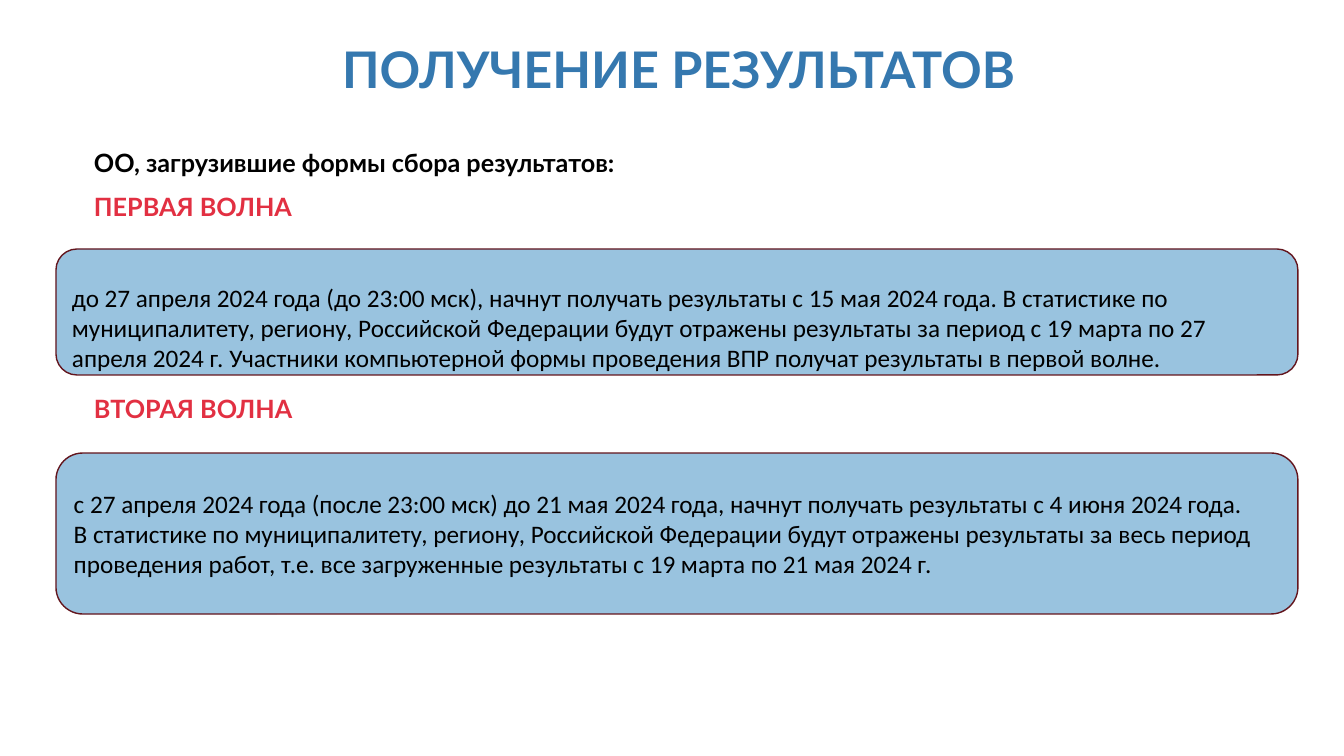
from pptx import Presentation
from pptx.dml.color import RGBColor
from pptx.enum.shapes import MSO_SHAPE
from pptx.enum.text import MSO_ANCHOR, MSO_AUTO_SIZE, PP_ALIGN
from pptx.util import Pt

COLORS = {"title": "3578AF", "text": "000000", "wave": "E23042",
          "panel": "99C3DF", "border": "63151D"}
TITLE = "ПОЛУЧЕНИЕ РЕЗУЛЬТАТОВ"
TITLE_BOX = (84, 40, 1189, 69)

# box in px, then (text, colour) lines
HEADINGS = [
    ((84, 142, 588, 93), [("ОО, загрузившие формы сбора результатов:", "text"),
                          ("ПЕРВАЯ ВОЛНА", "wave")]),
    ((84, 388, 588, 58), [("ВТОРАЯ ВОЛНА", "wave")]),
]
# top, height and top inset in px, then paragraphs
PANEL_LEFT, PANEL_WIDTH = 56, 1242
PANELS = [
    (249, 126, 36, [
        "до 27 апреля 2024 года (до 23:00 мск), начнут получать результаты с 15 мая 2024 года. "
        "В статистике по муниципалитету, региону, Российской Федерации будут отражены результаты "
        "за период с 19 марта по 27 апреля 2024 г. Участники компьютерной формы проведения ВПР "
        "получат результаты в первой волне."]),
    (453, 161, 5, [
        "с 27 апреля 2024 года (после 23:00 мск) до 21 мая 2024 года, начнут получать результаты "
        "с 4 июня 2024 года.",
        "В статистике по муниципалитету, региону, Российской Федерации будут отражены результаты "
        "за весь период проведения работ, т.е. все загруженные результаты с 19 марта "
        "по 21 мая 2024 г."]),
]


def px(n):
    return round(n * 914400 / 100.8)


def rgb(name):
    return RGBColor.from_string(COLORS[name])


def write(tf, lines, font, size, bold=False, align=PP_ALIGN.LEFT, gap=0):
    """Fill a text frame with (text, colour) paragraphs, gap points apart."""
    tf.word_wrap = True
    for i, (text, color) in enumerate(lines):
        p = tf.paragraphs[0] if i == 0 else tf.add_paragraph()
        p.text = text
        p.alignment = align
        p.space_before = Pt(gap if i else 0)
        p.font.name, p.font.size, p.font.bold = font, Pt(size), bold
        p.font.color.rgb = rgb(color)


prs = Presentation()
prs.slide_width, prs.slide_height = px(1344), px(756)
s = prs.slides.add_slide(prs.slide_layouts[5])

title = s.shapes.title
title.left, title.top, title.width, title.height = map(px, TITLE_BOX)
tf = title.text_frame
write(tf, [(TITLE, "title")], "Lato", 36, True, PP_ALIGN.CENTER)
tf.auto_size = MSO_AUTO_SIZE.NONE
tf.vertical_anchor = MSO_ANCHOR.TOP
tf.paragraphs[0].line_spacing = 0.9

for box, lines in HEADINGS:
    tb = s.shapes.add_textbox(*map(px, box))
    write(tb.text_frame, lines, "Lato", 18, True, gap=10)

for top, height, inset, paragraphs in PANELS:
    sp = s.shapes.add_shape(MSO_SHAPE.ROUNDED_RECTANGLE,
                            *map(px, (PANEL_LEFT, top, PANEL_WIDTH, height)))
    sp.shadow.inherit = False
    sp.fill.solid()
    sp.fill.fore_color.rgb = rgb("panel")
    sp.line.color.rgb = rgb("border")
    sp.line.width = Pt(1)
    tf = sp.text_frame
    tf.margin_top = px(inset)
    tf.vertical_anchor = MSO_ANCHOR.MIDDLE
    write(tf, [(text, "text") for text in paragraphs], "Calibri", 18)

prs.save("out.pptx")
